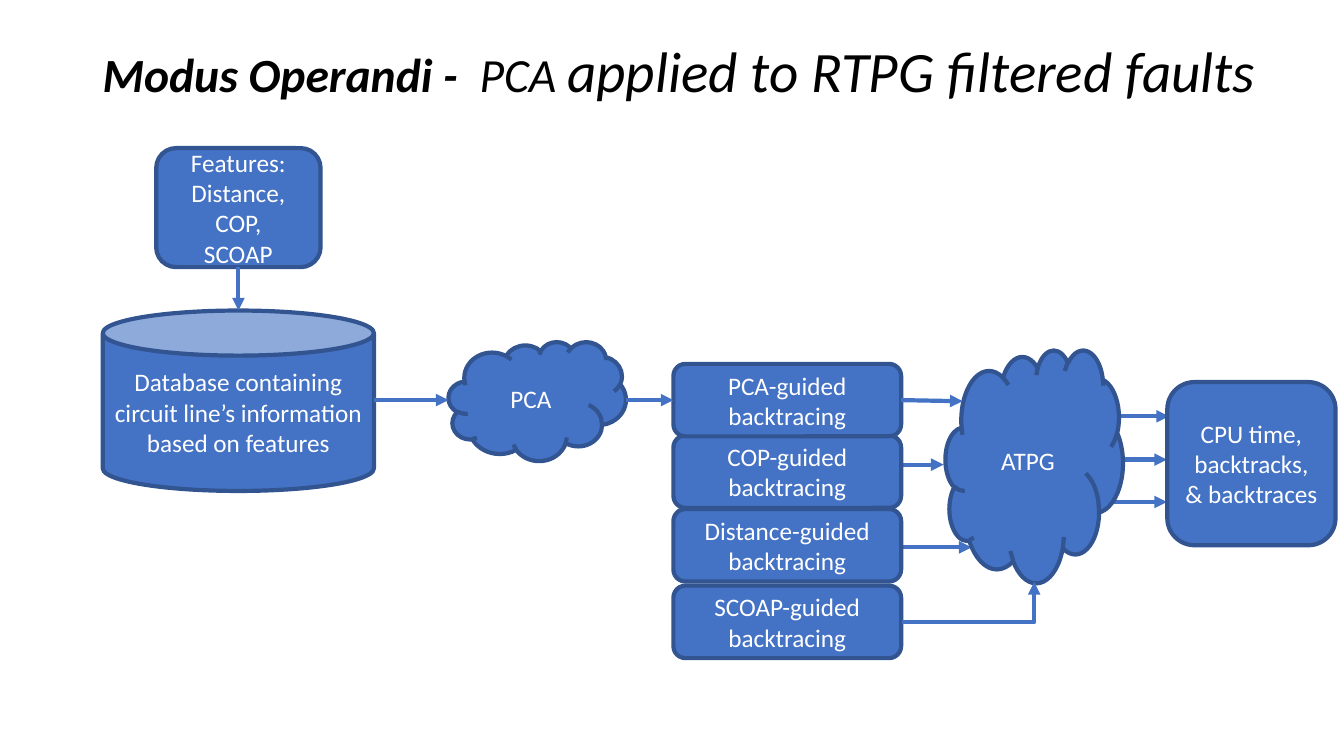
"""Build the slide showing how PCA is applied to RTPG filtered faults."""
from pptx import Presentation
from pptx.dml.color import RGBColor
from pptx.enum.shapes import MSO_CONNECTOR as Connector, MSO_SHAPE as Shape
from pptx.enum.text import MSO_ANCHOR as Anchor, PP_ALIGN as Align
from pptx.oxml.ns import qn
from pptx.util import Pt
from lxml.etree import SubElement

BLACK = RGBColor(0x00, 0x00, 0x00)
WHITE = RGBColor(0xFF, 0xFF, 0xFF)
BLUE = RGBColor(0x44, 0x72, 0xC4)
DARK_BLUE = RGBColor(0x32, 0x54, 0x91)


def add_text(paragraph, text, size=18, color=WHITE, bold=False, italic=False):
    run = paragraph.add_run()
    run.text = text
    run.font.name = "Calibri"
    run.font.size = Pt(size)
    run.font.color.rgb = color
    run.font.bold = bold
    run.font.italic = italic


def add_arrow(start, end, kind=Connector.STRAIGHT):
    points = [Pt(value) for value in (*start, *end)]
    arrow = slide.shapes.add_connector(kind, *points)
    arrow.line.color.rgb = BLUE
    arrow.line.width = Pt(3)
    SubElement(arrow.line._get_or_add_ln(), qn("a:tailEnd"), type="triangle")
    SubElement(arrow._element.spPr, qn("a:effectLst"))
    return arrow


presentation = Presentation()
presentation.slide_width = Pt(960)
presentation.slide_height = Pt(540)
slide = presentation.slides.add_slide(presentation.slide_layouts[6])

title = slide.shapes.add_textbox(Pt(66.2), Pt(0), Pt(856), Pt(77.8))
title.text_frame.word_wrap = True
title.text_frame.vertical_anchor = Anchor.BOTTOM
heading = title.text_frame.paragraphs[0]
heading.line_spacing = 0.8
for text, size, bold in [
    ("Modus Operandi -  ", 34, True),
    ("PCA ", 34, False),
    ("applied to RTPG filtered faults", 40.8, False),
]:
    add_text(heading, text, size=size, color=BLACK, bold=bold, italic=True)

outgoing = [((781, 297.4), (835, 297.4)), ((799, 328.3), (833.5, 328.3)),
            ((768, 358.6), (833.5, 358.6))]
for start, end in outgoing:
    add_arrow(start, end)
add_arrow((643.7, 331.9), (674, 331.9))
add_arrow((643.7, 391), (694, 391))

BOX = Shape.FLOWCHART_ALTERNATE_PROCESS
nodes = [
    ("features", BOX, 111.6, 105.8, 117.4, 85, ["Features: Distance,", "COP,", "SCOAP"]),
    ("database", Shape.CAN, 73.4, 221.8, 193.7, 128.9,
     ["Database containing circuit line’s information based on features"]),
    ("pca", Shape.CLOUD, 320.4, 244.1, 126.7, 85, ["PCA"]),
    ("atpg", Shape.CLOUD, 675.4, 249.8, 126.7, 166.3, ["ATPG"]),
    ("results", BOX, 833.8, 272.9, 120.2, 116.6, ["CPU time, backtracks, & backtraces"]),
]
for guide, top in [("COP", 311), ("Distance", 363.6), ("PCA", 259.9), ("SCOAP", 418.3)]:
    nodes.append((guide, BOX, 481, top, 162.7, 51.8, [f"{guide}-guided backtracing"]))

shapes = {}
for name, kind, left, top, width, height, lines in nodes:
    shape = slide.shapes.add_shape(kind, Pt(left), Pt(top), Pt(width), Pt(height))
    shape.shadow.inherit = False
    shape.fill.solid()
    shape.fill.fore_color.rgb = BLUE
    shape.line.color.rgb = DARK_BLUE
    shape.line.width = Pt(3)
    frame = shape.text_frame
    frame.word_wrap = True
    frame.vertical_anchor = Anchor.MIDDLE
    for index, line in enumerate(lines):
        paragraph = frame.add_paragraph() if index else frame.paragraphs[0]
        paragraph.alignment = Align.CENTER
        add_text(paragraph, line)
    shapes[name] = shape

add_arrow((170.3, 190.8), (170.3, 221.8)).begin_connect(shapes["features"], 2)
add_arrow((267.1, 285.8), (320.4, 285.8))
add_arrow((447.1, 285.8), (481, 285.8)).end_connect(shapes["PCA"], 1)
add_arrow((643.7, 285.8), (687.6, 286.6)).begin_connect(shapes["PCA"], 3)

elbow = add_arrow((644, 444.6), (738.7, 415.8), kind=Connector.ELBOW)
elbow._element.spPr.find(qn("a:prstGeom")).set("prst", "bentConnector2")

presentation.save("out.pptx")
